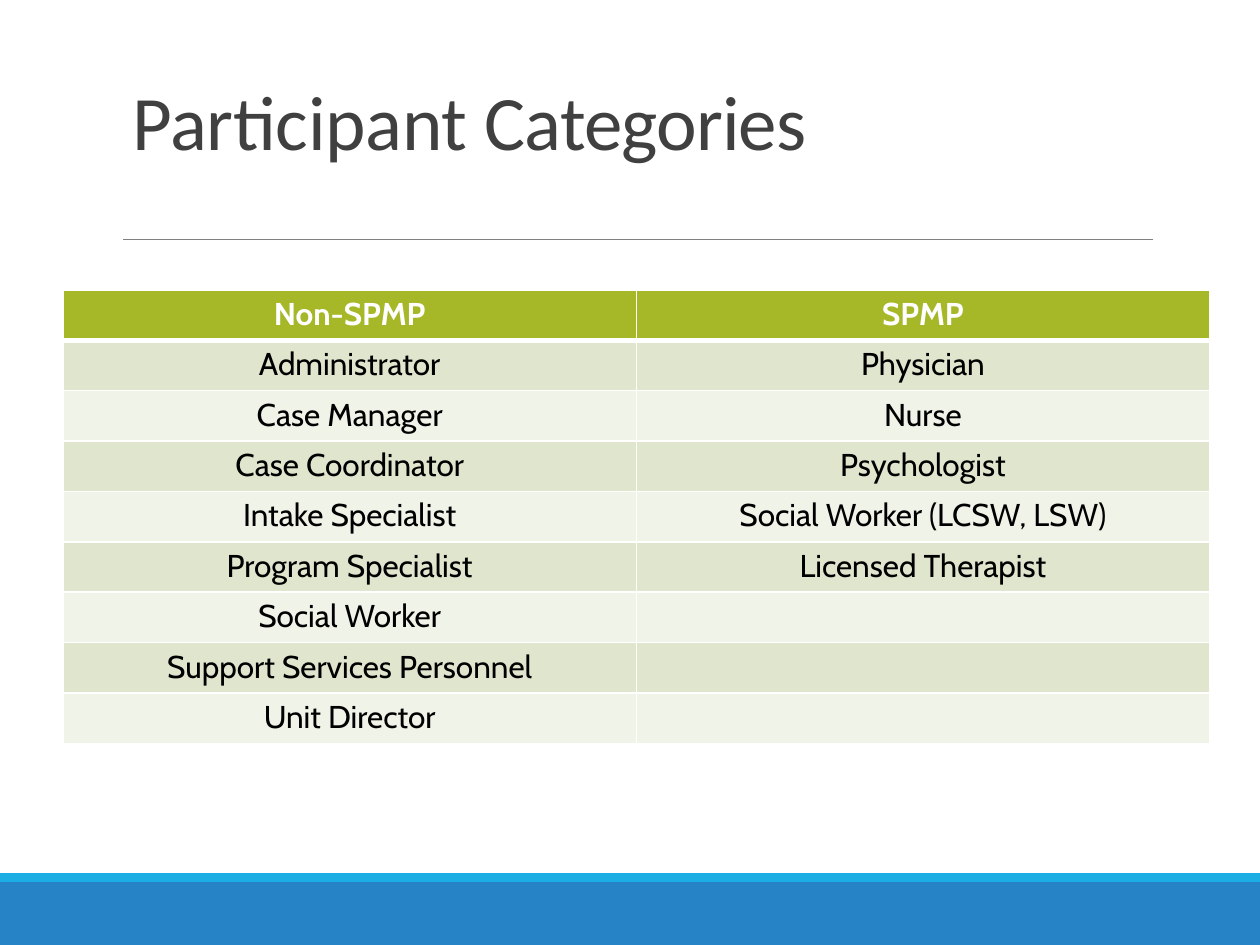
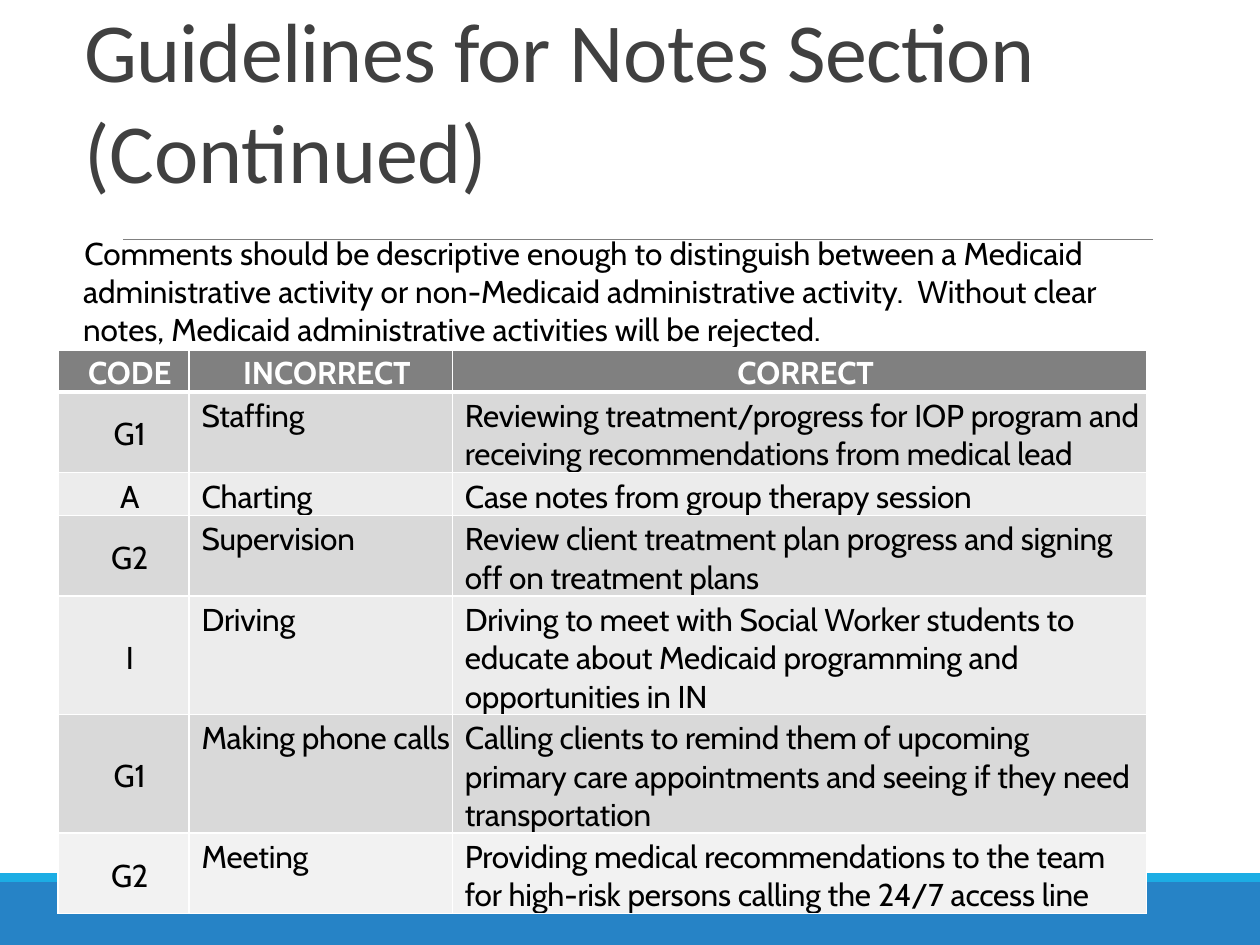
from lxml import etree
from pptx import Presentation
from pptx.dml.color import RGBColor
from pptx.enum import shapes, text
from pptx.oxml import ns
from pptx.util import Pt

PX = 9144
SLIDE = (1000, 750)
COLORS = {
    "blue": "2683C6", "cyan": "1CADE4", "rule": "808080", "title": "404040",
    "black": "000000", "white": "FFFFFF", "green": "A6B727",
    "green_dark": "E0E6CD", "green_light": "F0F3E8",
    "gray_dark": "D9D9D9", "gray_light": "ECECEC", "gray_last": "F2F2F2",
}
CENTER, LEFT = text.PP_ALIGN.CENTER, text.PP_ALIGN.LEFT

CATEGORIES = [
    ("Non-SPMP", "SPMP"),
    ("Administrator", "Physician"),
    ("Case Manager", "Nurse"),
    ("Case Coordinator", "Psychologist"),
    ("Intake Specialist", "Social Worker (LCSW, LSW)"),
    ("Program Specialist", "Licensed Therapist"),
    ("Social Worker", ""),
    ("Support Services Personnel", ""),
    ("Unit Director", ""),
]
NOTES = [
    ("CODE", "INCORRECT", "CORRECT"),
    ("G1", "Staffing", "Reviewing treatment/progress for IOP program and "
     "receiving recommendations from medical lead"),
    ("A", "Charting", "Case notes from group therapy session"),
    ("G2", "Supervision", "Review client treatment plan progress and signing "
     "off on treatment plans"),
    ("I", "Driving", "Driving to meet with Social Worker students to educate "
     "about Medicaid programming and opportunities in IN"),
    ("G1", "Making phone calls", "Calling clients to remind them of upcoming\n"
     "primary care appointments and seeing if they need transportation"),
    ("G2", "Meeting", "Providing medical recommendations to the team for "
     "high-risk persons calling the 24/7 access line"),
]


def rgb(name):
    return RGBColor.from_string(COLORS[name])


def emu(box):
    return [n * PX for n in box]


def style_run(r, font, size, color, tracking=0, bold=False):
    r.font.name = font
    r.font.size = Pt(size)
    r.font.bold = bold
    r.font.color.rgb = rgb(color)
    r._r.get_or_add_rPr().set("spc", str(tracking))


def set_margins(target, left, top):
    target.margin_left, target.margin_top = left * PX, top * PX
    target.margin_right = target.margin_bottom = 0


def add_text(s, box, runs, font, size, color, left=0, top=1, indent=0,
             anchor=text.MSO_ANCHOR.TOP):
    tf = s.shapes.add_textbox(*emu(box)).text_frame
    tf.word_wrap = True
    tf.auto_size = text.MSO_AUTO_SIZE.SHAPE_TO_FIT_TEXT
    tf.vertical_anchor = anchor
    set_margins(tf, left, top)
    p = tf.paragraphs[0]
    p._p.get_or_add_pPr().set("indent", str(indent * PX))
    for words, tracking in runs:
        r = p.add_run()
        r.text = words
        style_run(r, font, size, color, tracking)


def add_title(s, box, size, runs):
    add_text(s, box, runs, "Calibri", size, "title", left=1,
             anchor=text.MSO_ANCHOR.BOTTOM)


def add_band(s, box, color):
    sp = s.shapes.add_shape(shapes.MSO_SHAPE.RECTANGLE, *emu(box))
    sp.shadow.inherit = False
    sp.fill.solid()
    sp.fill.fore_color.rgb = rgb(color)
    sp.line.fill.background()


def add_frame(prs):
    s = prs.slides.add_slide(prs.slide_layouts[6])
    add_band(s, (0, 700, 1000, 50), "blue")
    add_band(s, (0, 693, 1000, 7), "cyan")
    rule = s.shapes.add_connector(shapes.MSO_CONNECTOR.STRAIGHT,
                                  *emu((98, 190, 915, 190)))
    rule.line.color.rgb = rgb("rule")
    rule.line.width = Pt(0.5)
    etree.SubElement(rule._element.spPr, ns.qn("a:effectLst"))
    return s


def set_borders(cell, widths):
    tcPr = cell._tc.get_or_add_tcPr()
    for side, width in zip("LRTB", widths):
        ln = etree.SubElement(tcPr, ns.qn("a:ln" + side), w=str(Pt(width)))
        fill = etree.SubElement(ln, ns.qn("a:solidFill"))
        etree.SubElement(fill, ns.qn("a:srgbClr"), val=COLORS["white"])


def add_table(s, box, rows, widths, heights, fills, aligns, left=0,
              tracking=0, header_top=1):
    frame = s.shapes.add_table(len(rows), len(widths), *emu(box))
    table = frame.table
    for column, width in zip(table.columns, widths):
        column.width = width * PX
    for i, (values, height) in enumerate(zip(rows, heights)):
        table.rows[i].height = height * PX
        header = i == 0
        top = header_top if header else 3 if i == 1 else 1
        for j, value in enumerate(values):
            cell = table.cell(i, j)
            set_borders(cell, (1, 1, top, 3 if header else 1))
            cell.fill.solid()
            cell.fill.fore_color.rgb = rgb(fills[i])
            set_margins(cell, left, 4)
            if left and j == 0 and not header:
                cell.vertical_anchor = text.MSO_ANCHOR.MIDDLE
            cell.text_frame.text = value
            for p in cell.text_frame.paragraphs:
                p.alignment = CENTER if header else aligns[j]
                for r in p.runs:
                    style_run(r, "Cabin", 18, "white" if header else "black",
                              0 if header else tracking, header)
    frame.height = box[3] * PX


def build_categories(prs):
    s = add_frame(prs)
    add_table(s, (50, 230, 910, 360), CATEGORIES, [455] * 2,
              [40] * len(CATEGORIES),
              ["green"] + ["green_dark", "green_light"] * 4, [CENTER] * 2)
    add_title(s, (104, 56, 546, 76), 44,
              [("Participant ", -20), ("Categories", -50)])


def build_guidelines(prs):
    s = add_frame(prs)
    add_title(s, (66, 96, 806, 63), 48, [
        ("Guidelines ", -50), ("for ", -20), ("Notes ", -10),
        ("Section ", -50), ("(Continued)", -10)])
    add_text(s, (66, 180, 826, 97), [
        ("Comments should be descriptive enough to distinguish between a "
         "Medicaid administrative activity or non-Medicaid administrative "
         "activity.  Without clear notes, Medicaid administrative activities "
         "will be rejected.", 0)], "Cabin", 18, "black", top=6, indent=1)
    add_table(s, (46, 277, 864, 446), NOTES, [104, 209, 551],
              [29, 55, 29, 55, 81, 81, 55],
              ["rule"] + ["gray_dark", "gray_light"] * 2
              + ["gray_dark", "gray_last"],
              [CENTER, LEFT, LEFT], left=10, tracking=-10, header_top=3)


def main():
    prs = Presentation()
    prs.slide_width, prs.slide_height = emu(SLIDE)
    build_categories(prs)
    build_guidelines(prs)
    prs.save("out.pptx")


if __name__ == "__main__":
    main()
